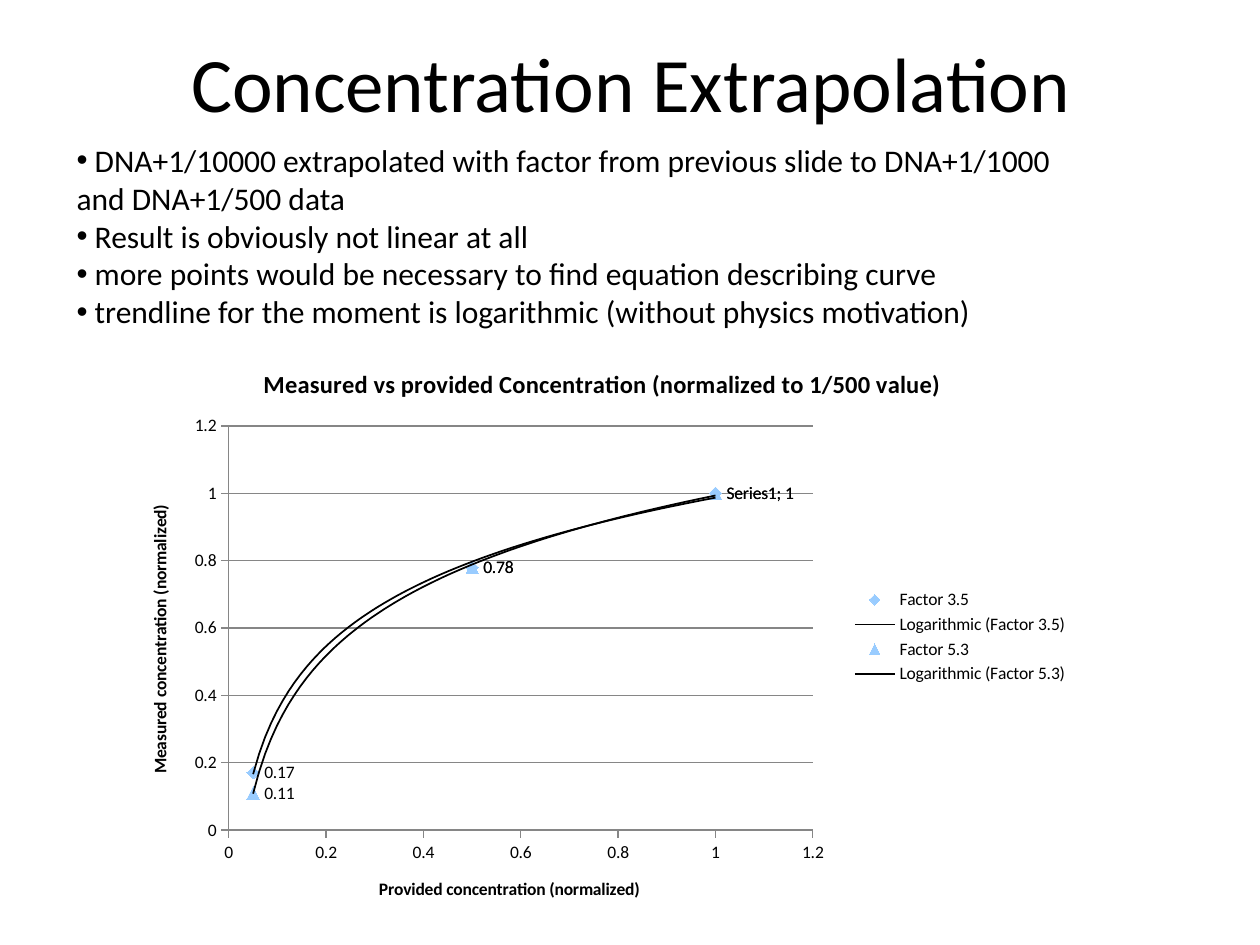
from lxml import etree
from pptx import Presentation
from pptx.chart.data import XyChartData
from pptx.chart.datalabel import DataLabels
from pptx.dml.color import RGBColor
from pptx.enum.chart import (XL_CHART_TYPE, XL_LABEL_POSITION, XL_LEGEND_POSITION,
                             XL_MARKER_STYLE, XL_TICK_MARK)
from pptx.enum.text import MSO_ANCHOR, PP_ALIGN
from pptx.oxml import parse_xml
from pptx.oxml.ns import nsdecls, qn
from pptx.util import Inches, Pt

BLACK = RGBColor(0x00, 0x00, 0x00)
GRAY = RGBColor(0x86, 0x86, 0x86)
LIGHT_BLUE = RGBColor(0x99, 0xCC, 0xFF)
FONT = "Calibri"
RIGHT = XL_LABEL_POSITION.RIGHT
DIAMOND = XL_MARKER_STYLE.DIAMOND
TRIANGLE = XL_MARKER_STYLE.TRIANGLE
OUTSIDE = XL_TICK_MARK.OUTSIDE


def style_font(font, size, bold=False):
    font.name = FONT
    font.size = Pt(size)
    font.bold = bold
    font.color.rgb = BLACK


def set_title(owner, text, size):
    owner.has_title = True
    title = owner.chart_title if hasattr(owner, "chart_title") else owner.axis_title
    title.text_frame.text = text
    style_font(title.text_frame.paragraphs[0].runs[0].font, size, bold=True)


prs = Presentation()
prs.slide_width, prs.slide_height = Inches(10), Inches(7.5)
slide = prs.slides.add_slide(prs.slide_layouts[6])

# Heading
heading = slide.shapes.add_textbox(Inches(0.51), Inches(0.13), Inches(9), Inches(1.03)).text_frame
heading.word_wrap = True
heading.vertical_anchor = MSO_ANCHOR.MIDDLE
heading.text = "Concentration Extrapolation"
heading.paragraphs[0].alignment = PP_ALIGN.CENTER
style_font(heading.paragraphs[0].runs[0].font, 44)

# Measured against provided concentration
PROVIDED = (1, 0.5, 0.05)
MEASURED = {"Factor 3.5": (1, 0.78, 0.17), "Factor 5.3": (1, 0.78, 0.11)}
data = XyChartData()
for factor, values in MEASURED.items():
    points = data.add_series(factor)
    for provided, measured in zip(PROVIDED, values):
        points.add_data_point(provided, measured)
chart = slide.shapes.add_chart(XL_CHART_TYPE.XY_SCATTER, Inches(0.98), Inches(2.73),
                               Inches(7.6), Inches(4.65), data).chart
style_font(chart.font, 10)
set_title(chart, "Measured vs provided Concentration (normalized to 1/500 value)", 14)
chart.has_legend = True
chart.legend.position = XL_LEGEND_POSITION.RIGHT
chart.legend.include_in_layout = False
chart.plots[0].vary_by_categories = False

# Axes
for axis, title in ((chart.category_axis, "Provided concentration (normalized)"),
                    (chart.value_axis, "Measured concentration (normalized)")):
    set_title(axis, title, 10)
    axis.minimum_scale, axis.maximum_scale, axis.major_unit = 0, 1.2, 0.2
    axis.major_tick_mark = OUTSIDE
    axis.tick_labels.number_format = "General"
    axis.tick_labels.number_format_is_linked = False
    axis.format.line.color.rgb = GRAY
chart.category_axis.has_major_gridlines = False
chart.value_axis.has_major_gridlines = True
chart.value_axis.major_gridlines.format.line.color.rgb = GRAY

# Markers, labels and logarithmic trend lines
for series, marker_style in zip(chart.plots[0].series, (DIAMOND, TRIANGLE)):
    series.format.line.fill.background()
    series.marker.style = marker_style
    series.marker.size = 7
    series.marker.format.fill.solid()
    series.marker.format.fill.fore_color.rgb = LIGHT_BLUE
    series.marker.format.line.color.rgb = LIGHT_BLUE
    labels = DataLabels(series._element.get_or_add_dLbls())
    labels.show_value = True
    labels.position = RIGHT
    style_font(labels.font, 10)
    first_label = series.points[0].data_label
    first_label.text_frame.text = "Series1; 1"
    style_font(first_label.text_frame.paragraphs[0].runs[0].font, 10)
    first_label.position = RIGHT
    series._element.find(qn("c:xVal")).addprevious(parse_xml(
        f'<c:trendline {nsdecls("c", "a")}><c:spPr><a:ln w="12700"><a:solidFill>'
        f'<a:srgbClr val="{BLACK}"/></a:solidFill></a:ln></c:spPr>'
        '<c:trendlineType val="log"/><c:dispRSqr val="0"/><c:dispEq val="0"/></c:trendline>'))

# Plot area as fractions of the chart
plot_area = chart._chartSpace.chart.plotArea
for old_layout in plot_area.findall(qn("c:layout")):
    plot_area.remove(old_layout)
plot_area.insert(0, parse_xml(
    f'<c:layout {nsdecls("c")}><c:manualLayout><c:layoutTarget val="inner"/>'
    '<c:xMode val="edge"/><c:yMode val="edge"/><c:x val="0.11"/><c:y val="0.14"/>'
    '<c:w val="0.61"/><c:h val="0.69"/></c:manualLayout></c:layout>'))

# Remarks
REMARKS = (
    " DNA+1/10000 extrapolated with factor from previous slide to DNA+1/1000 and DNA+1/500 data",
    " Result is obviously not linear at all",
    " more points would be necessary to find equation describing curve",
    " trendline for the moment is logarithmic (without physics motivation)",
)
remarks = slide.shapes.add_textbox(Inches(0.51), Inches(1.07), Inches(8.35), Inches(1.62)).text_frame
remarks.word_wrap = True
remarks.text = "\n".join(REMARKS)
for paragraph in remarks.paragraphs:
    style_font(paragraph.runs[0].font, 18)
    properties = paragraph._p.get_or_add_pPr()
    etree.SubElement(properties, qn("a:buFont"), typeface="Arial")
    etree.SubElement(properties, qn("a:buChar"), char="•")

prs.save("out.pptx")
